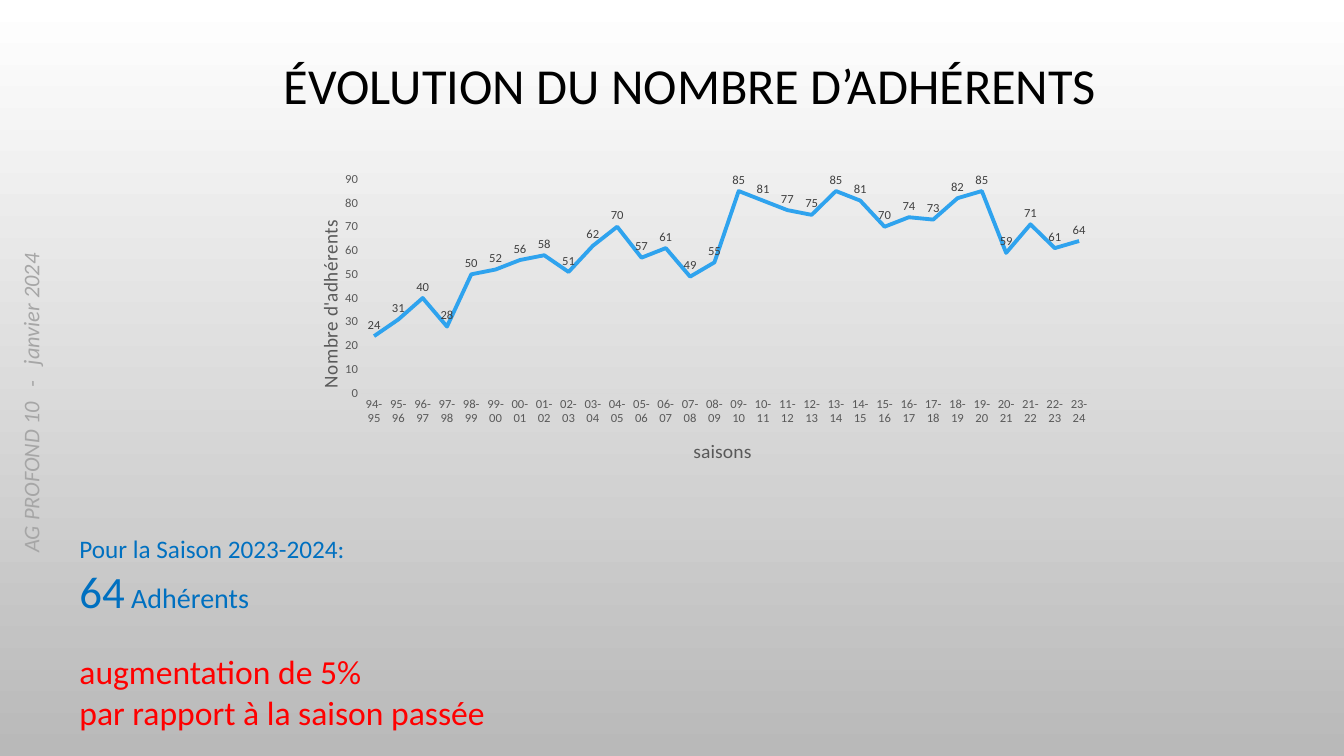
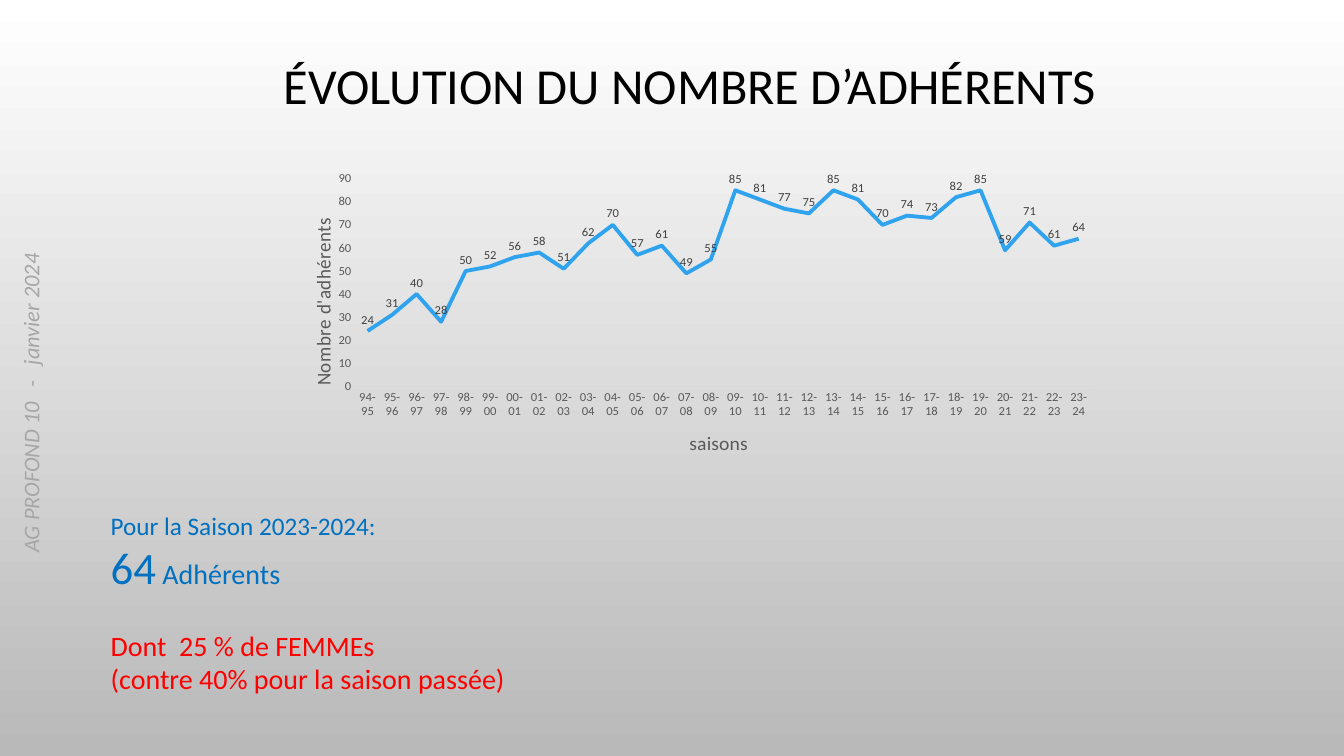
from dataclasses import dataclass
from typing import Any

from lxml import etree
from pptx import Presentation
from pptx.chart.data import CategoryChartData
from pptx.dml.color import RGBColor
from pptx.enum.chart import XL_CHART_TYPE, XL_LABEL_POSITION, XL_TICK_MARK
from pptx.enum.text import MSO_ANCHOR, MSO_AUTO_SIZE, PP_ALIGN
from pptx.oxml.ns import qn
from pptx.util import Pt

LINE = XL_CHART_TYPE.LINE_STACKED
ABOVE = XL_LABEL_POSITION.ABOVE
NO_TICK = XL_TICK_MARK.NONE
MIDDLE = MSO_ANCHOR.MIDDLE
NO_FIT = MSO_AUTO_SIZE.NONE
CENTER = PP_ALIGN.CENTER

FACE = "Calibri"
BLACK, WHITE, SHADE = "000000", "FFFFFF", "B9B9B9"
PALE, GREY, DARK, RULE = "A6A6A6", "595959", "404040", "D9D9D9"
SKY, BLUE, RED = "2FA3EE", "0070C0", "FF0000"

TITLE = "ÉVOLUTION DU NOMBRE D’ADHÉRENTS"
SIDE = "AG PROFOND 10   -   janvier 2024"
YEARS = [f"{y % 100:02}-{(y + 1) % 100:02}" for y in range(1994, 2024)]
COUNTS = [24, 31, 40, 28, 50, 52, 56, 58, 51, 62, 70, 57, 61, 49, 55,
          85, 81, 77, 75, 85, 81, 70, 74, 73, 82, 85, 59, 71, 61, 64]


@dataclass(frozen=True)
class Box:
    left: float
    top: float
    width: float
    height: float

    def pts(self) -> tuple[Pt, Pt, Pt, Pt]:
        return Pt(self.left), Pt(self.top), Pt(self.width), Pt(self.height)


@dataclass(frozen=True)
class Span:
    text: str
    size: float


@dataclass(frozen=True)
class Row:
    spans: tuple[Span, ...]
    color: str
    gap: float = 0


@dataclass(frozen=True)
class Page:
    chart: Box
    note: Box
    rows: tuple[Row, ...]


TITLE_BOX = Box(85, 0, 816, 126)
SIDE_BOX = Box(-136, 230.4, 316, 26.6)
INTRO = (
    Row((Span("Pour la Saison 2023-2024:", 18),), BLUE),
    Row((Span("64", 32), Span(" Adhérents", 20)), BLUE),
)
PAGES = (
    Page(Box(211.7, 117.4, 585.4, 218.2), Box(49.7, 377.3, 462, 150.5), INTRO + (
        Row((Span("augmentation de 5%", 24),), RED, 24.4),
        Row((Span("par rapport à la saison passée", 24),), RED),
    )),
    Page(Box(206.6, 117.4, 590.4, 212.4), Box(72, 360.7, 462, 140.4), INTRO + (
        Row((Span("Dont  25 % de FEMMEs", 20),), RED, 24.4),
        Row((Span("(contre 40% pour la saison passée)", 20),), RED),
    )),
)


def rgb(code: str) -> RGBColor:
    return RGBColor.from_string(code)


def style(font: Any, size: float, color: str) -> None:
    font.name = FACE
    font.size = Pt(size)
    font.bold = False
    font.color.rgb = rgb(color)


def shade(master: Any) -> None:
    fill = master.background.fill
    fill.gradient()
    fill.gradient_angle = 270
    for stop, color in zip(fill.gradient_stops, (WHITE, SHADE)):
        stop.color.rgb = rgb(color)


def head(slide: Any) -> None:
    shape = slide.shapes.title
    shape.left, shape.top, shape.width, shape.height = TITLE_BOX.pts()
    frame = shape.text_frame
    frame.text = TITLE
    frame.auto_size = NO_FIT
    frame.vertical_anchor = MIDDLE
    para = frame.paragraphs[0]
    para.alignment = CENTER
    para.line_spacing = 0.9
    style(para.font, 36, BLACK)


def side(slide: Any) -> None:
    shape = slide.shapes.add_textbox(*SIDE_BOX.pts())
    shape.rotation = 270
    frame = shape.text_frame
    frame.word_wrap = True
    frame.text = SIDE
    font = frame.paragraphs[0].font
    style(font, 16, PALE)
    font.italic = True


def note(slide: Any, box: Box, rows: tuple[Row, ...]) -> None:
    frame = slide.shapes.add_textbox(*box.pts()).text_frame
    frame.word_wrap = True
    for i, row in enumerate(rows):
        para = frame.add_paragraph() if i else frame.paragraphs[0]
        if row.gap:
            para.space_before = Pt(row.gap)
        style(para.font, row.spans[0].size, row.color)
        for span in row.spans:
            run = para.add_run()
            run.text = span.text
            if len(row.spans) > 1:
                run.font.size = Pt(span.size)


def place(owner: Any, index: int, inner: bool = False, **spots: float) -> None:
    for old in owner.findall(qn("c:layout")):
        owner.remove(old)
    layout = etree.Element(qn("c:layout"))
    manual = etree.SubElement(layout, qn("c:manualLayout"))
    pairs = [("layoutTarget", "inner")] if inner else []
    pairs += [("xMode", "edge"), ("yMode", "edge")]
    pairs += [(key, str(val)) for key, val in spots.items()]
    for tag, val in pairs:
        etree.SubElement(manual, qn(f"c:{tag}")).set("val", val)
    owner.insert(index, layout)


def label(axis: Any, text: str, turn: int, x: float, y: float) -> None:
    axis.has_major_gridlines = False
    axis.major_tick_mark = axis.minor_tick_mark = NO_TICK
    style(axis.tick_labels.font, 9, GREY)
    title = axis.axis_title
    title.text_frame.text = text
    style(title.text_frame.paragraphs[0].font, 14, GREY)
    node = title._element
    node.xpath(".//a:bodyPr")[0].set("rot", str(turn * 60000))
    place(node, 1, x=x, y=y)


def graph(slide: Any, box: Box) -> None:
    data = CategoryChartData()
    data.categories = YEARS
    data.add_series("Adhérents", COUNTS)
    chart = slide.shapes.add_chart(LINE, *box.pts(), data).chart
    chart.has_legend = False
    chart.has_title = False
    style(chart.font, 10, BLACK)
    area = chart._chartSpace.xpath("c:chart/c:plotArea")[0]
    place(area, 0, True, x=0.08, y=0.05, w=0.89, h=0.72)

    seasons, scale = chart.category_axis, chart.value_axis
    label(seasons, "saisons", 0, 0.48, 0.91)
    seasons.format.line.color.rgb = rgb(RULE)
    seasons.format.line.width = Pt(1)
    label(scale, "Nombre d'adhérents", -90, 0.02, 0.19)
    scale.format.line.fill.background()
    scale.minimum_scale, scale.maximum_scale = 0, 90
    scale.major_unit = 10

    plot = chart.plots[0]
    plot.vary_by_categories = False
    curve = plot.series[0]
    curve.smooth = False
    curve.format.line.color.rgb = rgb(SKY)
    curve.format.line.width = Pt(2.75)
    marks = curve.data_labels
    marks.show_value = True
    marks.position = ABOVE
    style(marks.font, 9, DARK)


def main() -> None:
    deck = Presentation()
    deck.slide_width, deck.slide_height = Pt(960), Pt(540)
    shade(deck.slide_master)
    for page in PAGES:
        slide = deck.slides.add_slide(deck.slide_layouts[5])
        head(slide)
        side(slide)
        graph(slide, page.chart)
        note(slide, page.note, page.rows)
    deck.save("out.pptx")


if __name__ == "__main__":
    main()
